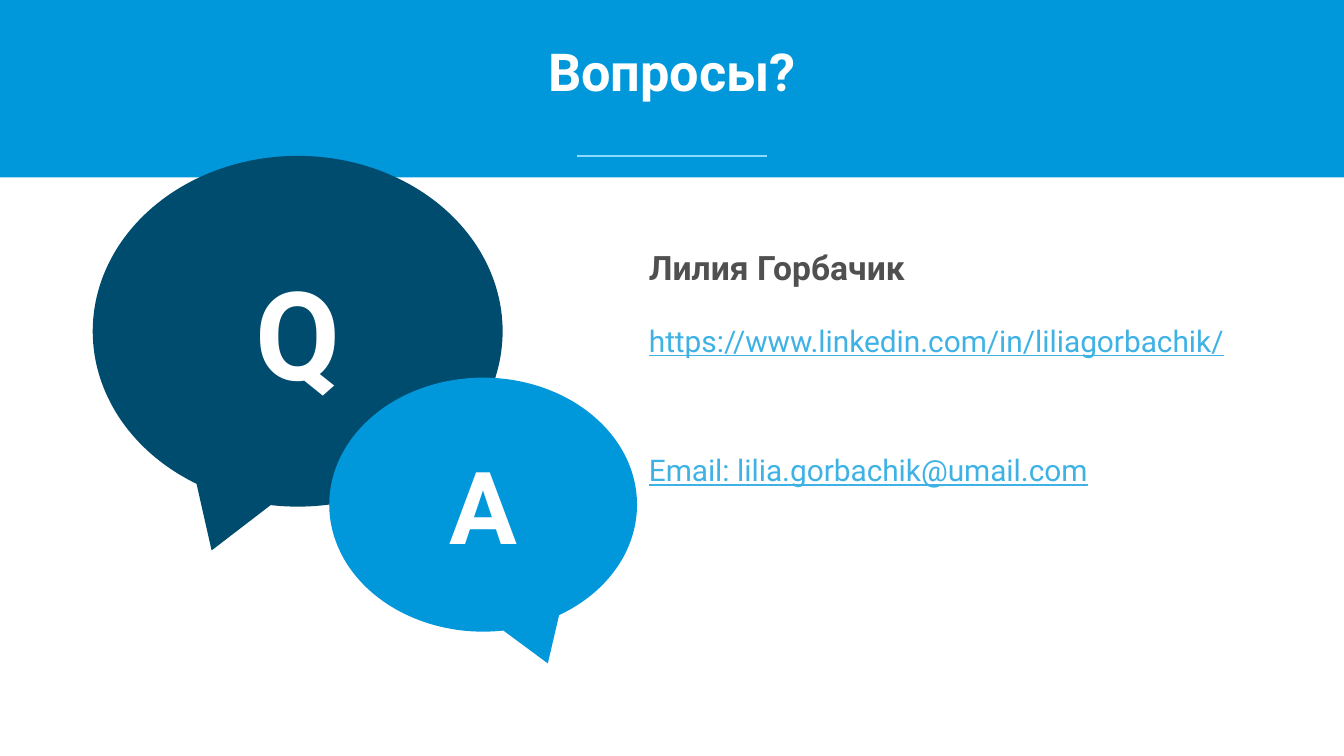
from lxml import etree
from pptx import Presentation
from pptx import util as u
from pptx.dml.color import RGBColor
from pptx.enum import shapes, text
from pptx.oxml.ns import qn

COLORS = {
    "blue": "0098DB",
    "navy": "004C6E",
    "pale": "8BDBFF",
    "link": "3FB2E5",
    "gray": "505050",
    "white": "FFFFFF",
}


class Deck:
    font = "Roboto"

    def __init__(self, width, height):
        self.prs = Presentation()
        self.prs.slide_width = u.Inches(width)
        self.prs.slide_height = u.Inches(height)
        self.slide = self.prs.slides.add_slide(self.prs.slide_layouts[5])

    def color(self, name):
        return RGBColor.from_string(COLORS[name])

    def style(self, paragraph, size, color, bold=False, underline=False):
        font = paragraph.font
        font.name, font.size = self.font, u.Pt(size)
        font.bold, font.underline = bold, underline
        font.color.rgb = self.color(color)

    def shape(self, kind, box, fill):
        shape = self.slide.shapes.add_shape(kind, *map(u.Inches, box))
        shape.shadow.inherit = False
        shape.fill.solid()
        shape.fill.fore_color.rgb = self.color(fill)
        shape.line.fill.background()
        return shape

    def bubble(self, letter, box, fill, size, tail):
        bubble = self.shape(shapes.MSO_SHAPE.OVAL_CALLOUT, box, fill)
        bubble.adjustments[0], bubble.adjustments[1] = tail, 0.625
        frame = bubble.text_frame
        frame.vertical_anchor = text.MSO_ANCHOR.MIDDLE
        paragraph = frame.paragraphs[0]
        paragraph.text = letter
        paragraph.alignment = text.PP_ALIGN.CENTER
        self.style(paragraph, size, "white", bold=True)

    def rule(self, x1, x2, y, color, weight):
        ends = map(u.Inches, (x1, y, x2, y))
        line = self.slide.shapes.add_connector(shapes.MSO_CONNECTOR.STRAIGHT, *ends)
        line.line.color.rgb = self.color(color)
        line.line.width = u.Pt(weight)
        etree.SubElement(line._element.spPr, qn("a:effectLst"))

    def title(self, wording, box, size):
        title = self.slide.shapes.title
        title.left, title.top, title.width, title.height = map(u.Inches, box)
        self.slide.shapes._spTree.append(title._element)  # in front of the band
        frame = title.text_frame
        frame.auto_size = text.MSO_AUTO_SIZE.NONE
        frame.vertical_anchor = text.MSO_ANCHOR.TOP
        frame.margin_left = frame.margin_right = 0
        frame.margin_top = frame.margin_bottom = 0
        paragraph = frame.paragraphs[0]
        paragraph.text = wording
        paragraph.alignment = text.PP_ALIGN.CENTER
        self.style(paragraph, size, "white", bold=True)

    def lines(self, box, entries):
        frame = self.slide.shapes.add_textbox(*map(u.Inches, box)).text_frame
        frame.word_wrap = True
        for i, (wording, after, look) in enumerate(entries):
            paragraph = frame.add_paragraph() if i else frame.paragraphs[0]
            paragraph.text = wording
            paragraph.space_after = u.Pt(after)
            self.style(paragraph, **look)


def main():
    deck = Deck(10, 10 * 9 / 16)

    # Header band
    deck.shape(shapes.MSO_SHAPE.RECTANGLE, (0, 0, 10, 1.32), "blue")
    deck.rule(4.29, 5.71, 1.16, "pale", 0.75)

    # Speech bubbles
    deck.bubble("Q", (0.69, 1.16, 3.05, 2.61), "navy", 66, tail=-0.21)
    deck.bubble("A", (2.45, 2.81, 2.29, 1.89), "blue", 54, tail=0.21)

    # Title and contacts
    deck.title("Вопросы?", (0.59, 0.29, 8.82, 0.39), 28)
    name = dict(size=18, color="gray", bold=True)
    link = dict(size=16, color="link", underline=True)
    deck.lines((4.73, 1.79, 5.07, 3.46), [
        ("Лилия Горбачик", 19, name),
        ("https://www.linkedin.com/in/liliagorbachik/", 50, link),
        ("Email: lilia.gorbachik@umail.com", 15, link),
    ])

    deck.prs.save("out.pptx")


if __name__ == "__main__":
    main()
